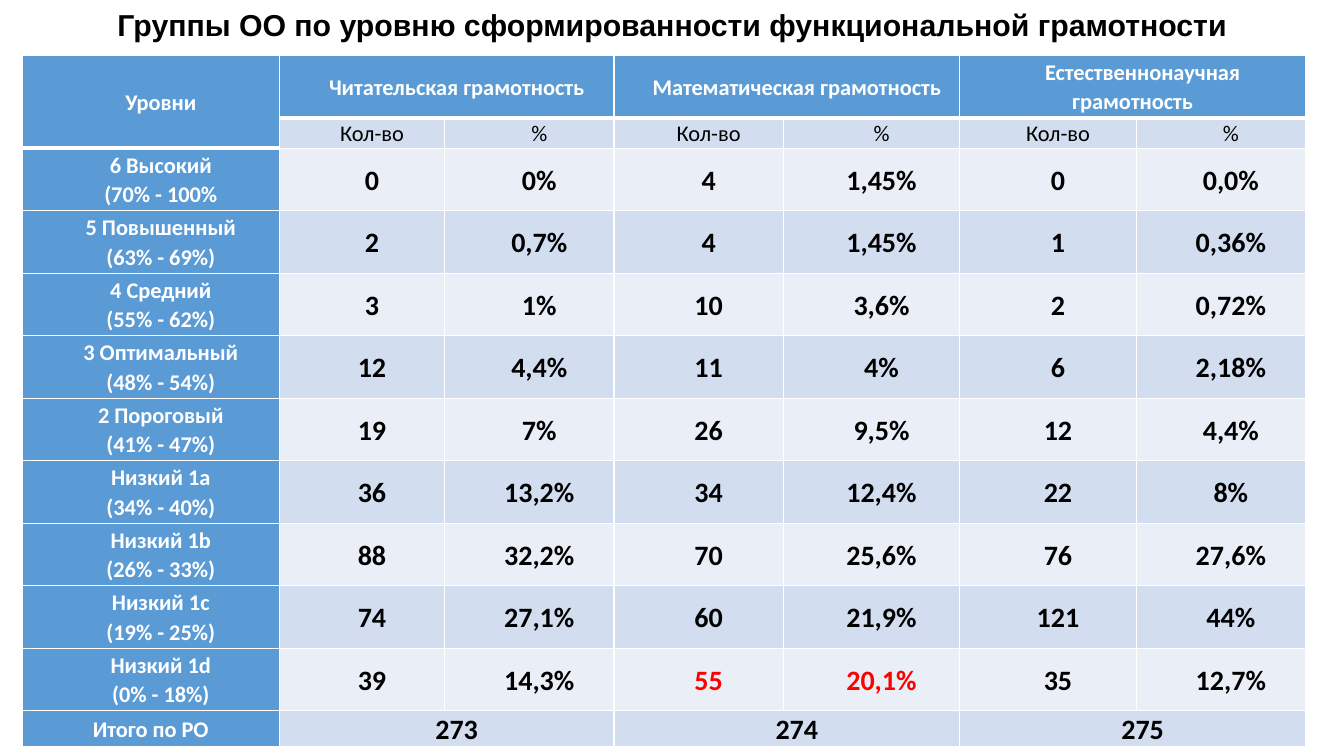
from lxml.etree import SubElement
from pptx import Presentation
from pptx.dml.color import RGBColor
from pptx.enum.text import MSO_ANCHOR, PP_ALIGN
from pptx.oxml.ns import qn
from pptx.util import Inches, Pt

BLUE, PALE, LIGHT = "5B9BD5", "D2DEEF", "EAEFF7"
WHITE, BLACK, RED = "FFFFFF", "000000", "FF0000"

TITLE = "Группы ОО по уровню сформированности функциональной грамотности"
SKILLS = ["Читательская грамотность", "Математическая грамотность",
          "Естественнонаучная грамотность"]
LEVELS = [
    ("6 Высокий\n(70% - 100%", "0 0% 4 1,45% 0 0,0%"),
    ("5 Повышенный\n(63% - 69%)", "2 0,7% 4 1,45% 1 0,36%"),
    ("4 Средний\n(55% - 62%)", "3 1% 10 3,6% 2 0,72%"),
    ("3 Оптимальный\n(48% - 54%)", "12 4,4% 11 4% 6 2,18%"),
    ("2 Пороговый\n(41% - 47%)", "19 7% 26 9,5% 12 4,4%"),
    ("Низкий 1a\n(34% - 40%)", "36 13,2% 34 12,4% 22 8%"),
    ("Низкий 1b\n(26% - 33%)", "88 32,2% 70 25,6% 76 27,6%"),
    ("Низкий 1c\n(19% - 25%)", "74 27,1% 60 21,9% 121 44%"),
    ("Низкий 1d\n(0% - 18%)", "39 14,3% 55 20,1% 35 12,7%"),
]
TOTALS = ["273", "274", "275"]
COLS = [19.13, 12.3, 12.6, 12.6, 13.13, 13.13, 12.6]
ROWS = [8.27, 4] + [8.27] * len(LEVELS) + [4.8]


def paint(code):
    """Turn a hex string into a colour."""
    return RGBColor.from_string(code)


def assign(obj, values):
    """Set each attribute of an object from a dict."""
    for name, value in values.items():
        setattr(obj, name, value)


class Deck:
    """Hold the style and the slide, measured in percent of its size."""

    def __init__(self):
        """Open a blank wide slide."""
        self.file = Presentation()
        assign(self.file, {"slide_width": Inches(13.33), "slide_height": Inches(7.5)})
        self.slide = self.file.slides.add_slide(self.file.slide_layouts[6])

    def across(self, share):
        """Give a share of the slide's width."""
        return round(self.file.slide_width * share / 100)

    def down(self, share):
        """Give a share of the slide's height."""
        return round(self.file.slide_height * share / 100)

    def box(self, left, top, width, height):
        """Give a place on the slide as four lengths."""
        return self.across(left), self.down(top), self.across(width), self.down(height)

    def label(self, frame, text, size, color, bold=True, face="Calibri",
              pitch=1.07, indent=0.2):
        """Fill a text frame with centred lines."""
        frame.text = text
        for line in frame.paragraphs:
            assign(line, {"alignment": PP_ALIGN.CENTER, "line_spacing": pitch})
            line._p.get_or_add_pPr().set("indent", str(Inches(indent)))
            for run in line.runs:
                assign(run.font, {"size": Pt(size), "bold": bold, "name": face})
                run.font.color.rgb = paint(color)

    def title(self, text, place):
        """Add the heading."""
        frame = self.slide.shapes.add_textbox(*self.box(*place)).text_frame
        assign(frame, {"word_wrap": True, "margin_top": 0, "margin_bottom": 0,
                       "vertical_anchor": MSO_ANCHOR.TOP})
        self.label(frame, text, 21.6, BLACK, face="Arial", pitch=0.9, indent=0)

    def table(self, left, top, cols, rows):
        """Add an empty table with the given columns and rows."""
        place = self.box(left, top, sum(cols), sum(rows))
        grid = self.slide.shapes.add_table(len(rows), len(cols), *place).table
        assign(grid, {"first_row": False, "horz_banding": False})
        for col, share in zip(grid.columns, cols):
            col.width = self.across(share)
        for row, share in zip(grid.rows, rows):
            row.height = self.down(share)
        return grid

    def cell(self, cell, fill, top=1, base=1):
        """Style one cell with its fill and white borders."""
        assign(cell, {"margin_left": Inches(0.07), "margin_right": Inches(0.07),
                      "margin_top": 0, "margin_bottom": 0,
                      "vertical_anchor": MSO_ANCHOR.MIDDLE})
        props = cell._tc.get_or_add_tcPr()
        for side, width in {"L": 1, "R": 1, "T": top, "B": base}.items():
            line = SubElement(props, qn(f"a:ln{side}"), w=str(Pt(width)))
            SubElement(SubElement(line, qn("a:solidFill")), qn("a:srgbClr"), val=WHITE)
        cell.fill.solid()
        cell.fill.fore_color.rgb = paint(fill)

    def save(self):
        """Save the file."""
        self.file.save("out.pptx")


def main():
    """Build the slide of literacy levels."""
    deck = Deck()
    deck.title(TITLE, (6.9, 1.33, 86.27, 9.6))
    grid = deck.table(1.65, 7.33, COLS, ROWS)
    last = len(ROWS) - 1

    for r in range(len(ROWS)):
        for c in range(len(COLS)):
            fill = BLUE if c == 0 or r == 0 else (LIGHT, PALE)[r % 2]
            edge = 2 if c == 0 else 1
            deck.cell(grid.cell(r, c), fill, 3 if r == edge else 1,
                      3 if r == edge - 1 or r == c == 0 else 1)

    grid.cell(0, 0).merge(grid.cell(1, 0))
    deck.label(grid.cell(0, 0).text_frame, "Уровни", 16, WHITE)
    for c, skill, total in zip(range(1, len(COLS), 2), SKILLS, TOTALS):
        for r, text, size, color in (0, skill, 16, WHITE), (last, total, 20, BLACK):
            grid.cell(r, c).merge(grid.cell(r, c + 1))
            deck.label(grid.cell(r, c).text_frame, text, size, color)
        for shift, text in enumerate(["Кол-во", "%"]):
            deck.label(grid.cell(1, c + shift).text_frame, text, 16, BLACK, bold=False)

    for r, (level, values) in enumerate(LEVELS, 2):
        deck.label(grid.cell(r, 0).text_frame, level, 16, WHITE)
        for c, value in enumerate(values.split(), 1):
            color = RED if r == last - 1 and c in (3, 4) else BLACK
            deck.label(grid.cell(r, c).text_frame, value, 20, color)
    deck.label(grid.cell(last, 0).text_frame, "Итого по РО", 16, WHITE, indent=0)
    deck.save()


if __name__ == "__main__":
    main()
